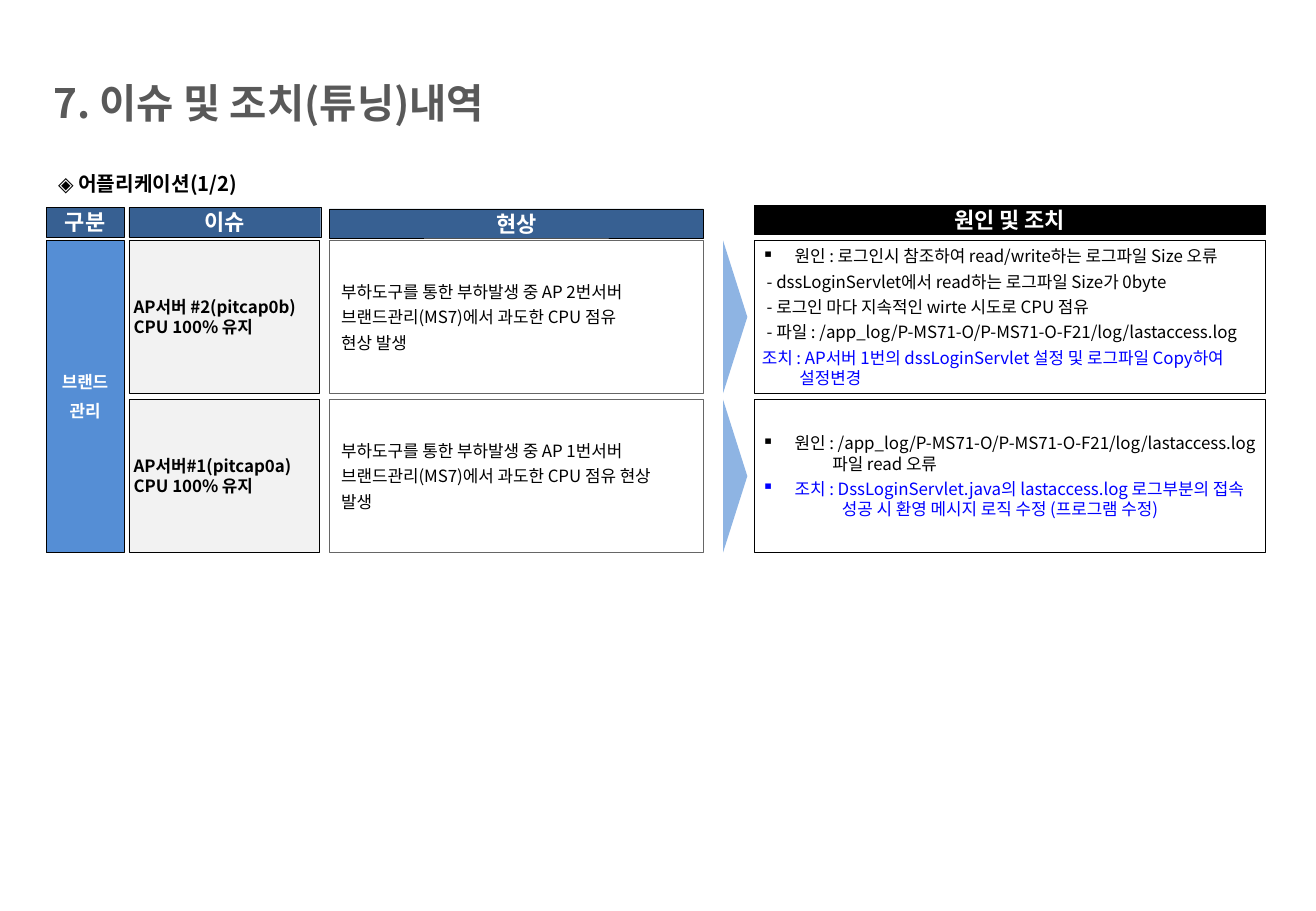
from dataclasses import dataclass

from lxml.etree import SubElement
from pptx import Presentation
from pptx.dml.color import RGBColor
from pptx.enum.shapes import MSO_SHAPE as Shape
from pptx.enum.text import MSO_ANCHOR as Anchor, PP_ALIGN as Align
from pptx.oxml.ns import qn
from pptx.util import Inches, Pt

FONT = "Noto Sans CJK KR"
BLACK = RGBColor(0, 0, 0)
WHITE = RGBColor(255, 255, 255)
GRAY = RGBColor(0x59, 0x59, 0x59)
EDGE = RGBColor(0x66, 0x66, 0x66)
PALE = RGBColor(0xF2, 0xF2, 0xF2)
NAVY = RGBColor(0x37, 0x60, 0x92)
BLUE = RGBColor(0x55, 0x8E, 0xD5)
SKY = RGBColor(0x8E, 0xB4, 0xE3)
LINK = RGBColor(0, 0, 255)


@dataclass
class Line:
    text: str
    color: RGBColor = BLACK
    left: float = 0
    bullet: bool = False
    gap: float = 3


@dataclass
class Style:
    size: float = 10
    bold: bool = False
    align: Align = Align.LEFT
    inset: float = 0


@dataclass
class Box:
    left: float
    top: float
    width: float
    height: float
    fill: RGBColor
    lines: list[Line]
    style: Style
    edge: RGBColor = BLACK
    weight: float = 0.25


@dataclass
class Issue:
    name: str
    signs: list[str]
    fixes: list[Line]


HEAD = Style(13, True, Align.CENTER)
GROUP = Style(10, True, Align.CENTER)
NAME = Style(10, True, inset=0.04)
SIGN = Style(inset=0.1)
FIX = Style(inset=0.06)

HEADS = [
    (0.38, 1.71, 0.64, NAVY, "구분"),
    (1.06, 1.71, 1.58, NAVY, "이슈"),
    (2.71, 1.72, 3.08, NAVY, "현상"),
    (6.21, 1.69, 4.2, BLACK, "원인 및 조치"),
]

ISSUES = [
    Issue(
        "AP서버 #2(pitcap0b)\vCPU 100% 유지",
        ["부하도구를 통한 부하발생 중 AP 2번서버",
         "브랜드관리(MS7)에서 과도한 CPU 점유", "현상 발생"],
        [
            Line("원인 : 로그인시 참조하여 read/write하는 로그파일 Size 오류",
                 left=0.27, bullet=True),
            Line("- dssLoginServlet에서 read하는 로그파일 Size가 0byte", left=0.04),
            Line("- 로그인 마다 지속적인 wirte 시도로 CPU 점유", left=0.04),
            Line("- 파일 : /app_log/P-MS71-O/P-MS71-O-F21/log/lastaccess.log",
                 left=0.04),
            Line("조치 : AP서버 1번의 dssLoginServlet 설정 및 로그파일 Copy하여", LINK),
            Line("설정변경", LINK, left=0.31, gap=0),
        ],
    ),
    Issue(
        "AP서버#1(pitcap0a)\vCPU 100% 유지",
        ["부하도구를 통한 부하발생 중 AP 1번서버",
         "브랜드관리(MS7)에서 과도한 CPU 점유 현상", "발생"],
        [
            Line("원인 : /app_log/P-MS71-O/P-MS71-O-F21/log/lastaccess.log",
                 left=0.27, bullet=True),
            Line("파일 read 오류", left=0.58, gap=0),
            Line("조치 : DssLoginServlet.java의 lastaccess.log 로그부분의 접속",
                 LINK, left=0.27, bullet=True),
            Line("성공 시 환영 메시지 로직 수정 (프로그램 수정)", LINK, left=0.66, gap=0),
        ],
    ),
]


def write(frame, lines: list[Line], style: Style) -> None:
    frame.word_wrap = True
    frame.vertical_anchor = Anchor.MIDDLE
    frame.margin_left = Inches(style.inset)
    frame.margin_right = frame.margin_top = frame.margin_bottom = 0
    for i, line in enumerate(lines):
        para = frame.add_paragraph() if i else frame.paragraphs[0]
        para.text = line.text
        para.alignment = style.align
        para.line_spacing = Pt(style.size * 1.2)
        para.space_before = Pt(line.gap if i else 0)
        props = para._p.get_or_add_pPr()
        props.set("marL", str(Inches(line.left)))
        props.set("indent", str(Inches(-line.left if line.bullet else 0)))
        if line.bullet:
            SubElement(props, qn("a:buChar")).set("char", "▪")
        else:
            SubElement(props, qn("a:buNone"))
        font = para.font
        font.size = Pt(style.size)
        font.bold = style.bold
        font.color.rgb = line.color
        font.name = FONT
        east = SubElement(props.find(qn("a:defRPr")), qn("a:ea"))
        east.set("typeface", FONT)


def draw(slide, box: Box) -> None:
    shape = slide.shapes.add_shape(
        Shape.RECTANGLE, Inches(box.left), Inches(box.top),
        Inches(box.width), Inches(box.height))
    shape.shadow.inherit = False
    shape.fill.solid()
    shape.fill.fore_color.rgb = box.fill
    shape.line.color.rgb = box.edge
    shape.line.width = Pt(box.weight)
    write(shape.text_frame, box.lines, box.style)


def point(slide, top: float) -> None:
    arrow = slide.shapes.add_shape(
        Shape.ISOSCELES_TRIANGLE, Inches(5.42), Inches(top + 0.53),
        Inches(1.26), Inches(0.2))
    arrow.rotation = 90
    arrow.shadow.inherit = False
    arrow.fill.solid()
    arrow.fill.fore_color.rgb = SKY
    arrow.line.fill.background()


def main() -> None:
    deck = Presentation()
    deck.slide_width, deck.slide_height = Inches(10.83), Inches(7.5)
    slide = deck.slides.add_slide(deck.slide_layouts[5])

    title = slide.shapes.title
    title.left, title.top = Inches(0.34), Inches(0.54)
    title.width, title.height = Inches(8.06), Inches(0.6)
    write(title.text_frame, [Line("7. 이슈 및 조치(튜닝)내역", GRAY)],
          Style(24, True, inset=0.1))

    note = slide.shapes.add_textbox(
        Inches(0.38), Inches(1.31), Inches(9.88), Inches(0.4))
    write(note.text_frame, [Line("◈ 어플리케이션(1/2)")],
          Style(12, True, inset=0.1))

    for left, top, width, fill, text in HEADS:
        draw(slide, Box(left, top, width, 0.24, fill, [Line(text, WHITE)], HEAD))

    group = [Line(text, WHITE, gap=5) for text in ("브랜드", "관리")]
    draw(slide, Box(0.38, 1.98, 0.64, 2.57, BLUE, group, GROUP))

    for row, issue in enumerate(ISSUES):
        top = 1.98 + row * 1.31
        signs = [Line(text) for text in issue.signs]
        draw(slide, Box(1.06, top, 1.57, 1.26, PALE, [Line(issue.name)], NAME))
        draw(slide, Box(2.71, top, 3.08, 1.26, WHITE, signs, SIGN, EDGE, 0.75))
        point(slide, top)
        draw(slide, Box(6.21, top, 4.2, 1.26, WHITE, issue.fixes, FIX))

    deck.save("out.pptx")


if __name__ == "__main__":
    main()
